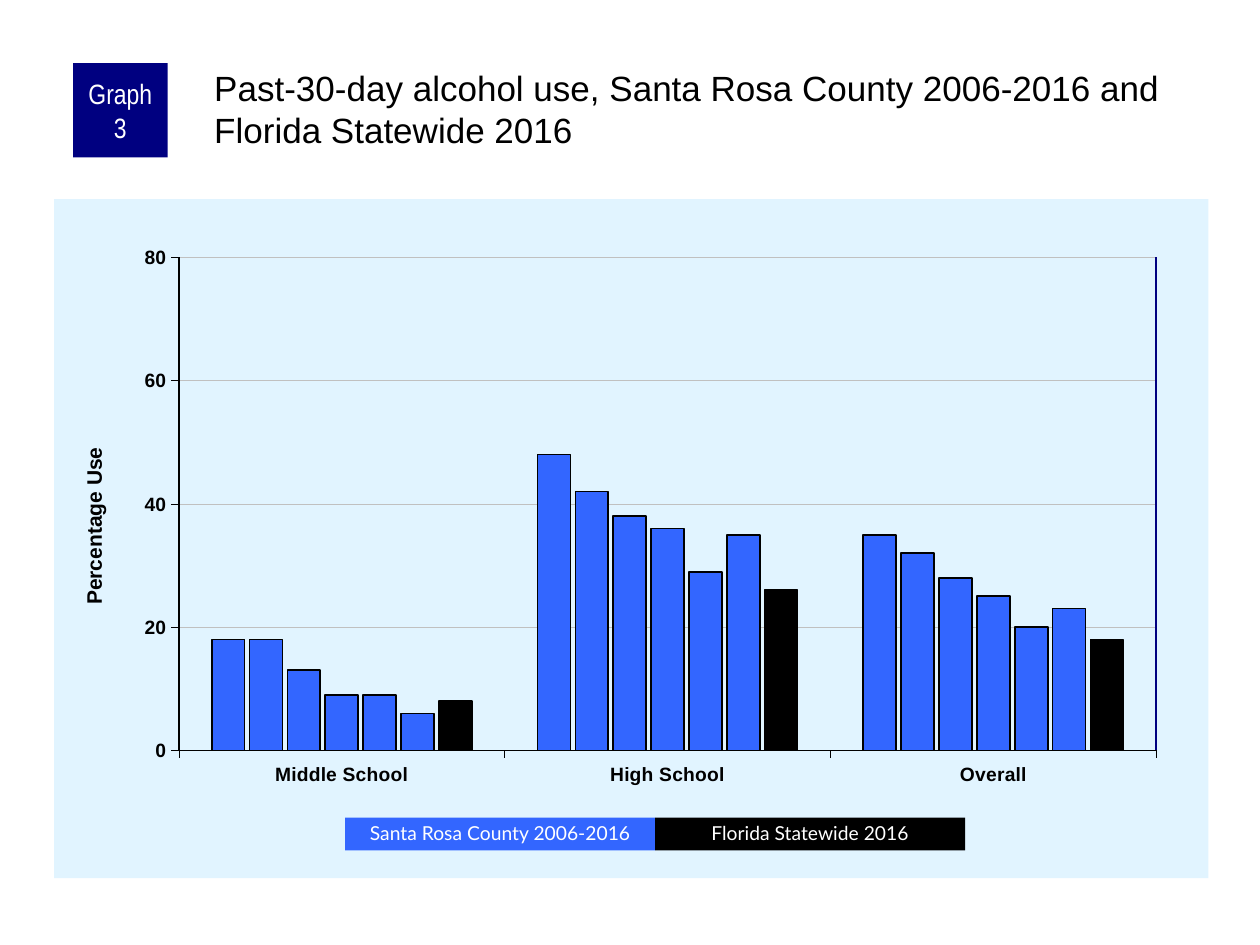
from dataclasses import dataclass

from lxml.etree import fromstring
from pptx import Presentation
from pptx.chart.data import CategoryChartData as Data
from pptx.dml.color import RGBColor
from pptx.enum.chart import XL_CHART_TYPE as Kind, XL_TICK_MARK as Tick
from pptx.enum.shapes import MSO_CONNECTOR as Link, MSO_SHAPE as Form
from pptx.enum.text import MSO_ANCHOR as Anchor, PP_ALIGN as Align
from pptx.oxml.ns import qn
from pptx.util import Inches, Pt

WIDE, HIGH = 10, 7.5
BLUE, NAVY, BLACK, WHITE = "3366FF", "000080", "000000", "FFFFFF"
PALE, GRAY = "E1F4FF", "C0C0C0"
NS = ('xmlns:c="http://schemas.openxmlformats.org/drawingml/2006/chart" '
      'xmlns:a="http://schemas.openxmlformats.org/drawingml/2006/main"')


@dataclass
class Area:
    """Left, top, width and height as inches on the slide."""
    x: float
    y: float
    w: float
    h: float

    def emu(self) -> list:
        return [Inches(v) for v in (self.x, self.y, self.w, self.h)]

    def inset(self, x: float, y: float, w: float, h: float) -> "Area":
        """An area given as shares of this one."""
        return Area(self.x + x * self.w, self.y + y * self.h,
                    w * self.w, h * self.h)


@dataclass
class Label:
    text: str
    area: Area
    fill: str
    face: str
    size: float
    space: float = 1.0
    pads: tuple = (0.05, 0, 0.05, 0)


def color(code: str) -> RGBColor:
    return RGBColor.from_string(code)


def put(thing, vals: dict) -> None:
    for key, val in vals.items():
        setattr(thing, key, val)


def ink(font, face: str, size: float, code: str, bold: bool = False) -> None:
    put(font, {"name": face, "size": Pt(size), "bold": bold})
    font.color.rgb = color(code)


def paint(fill, code: str) -> None:
    fill.solid()
    fill.fore_color.rgb = color(code)


def stroke(line, code: str, width: float) -> None:
    line.width = Pt(width)
    line.color.rgb = color(code)


def pad(frame, sides: tuple) -> None:
    names = ("margin_left", "margin_top", "margin_right", "margin_bottom")
    put(frame, {n: Inches(v) for n, v in zip(names, sides)})


def draw_label(slide, label: Label) -> None:
    box = slide.shapes.add_shape(Form.RECTANGLE, *label.area.emu())
    box.shadow.inherit = False
    paint(box.fill, label.fill)
    box.line.fill.background()
    frame = box.text_frame
    put(frame, {"word_wrap": True, "vertical_anchor": Anchor.MIDDLE,
                "text": label.text})
    pad(frame, label.pads)
    para = frame.paragraphs[0]
    put(para, {"alignment": Align.CENTER, "line_spacing": label.space})
    ink(para.runs[0].font, label.face, label.size, WHITE)


def draw_title(slide, text: str, area: Area) -> None:
    frame = slide.shapes.add_textbox(*area.emu()).text_frame
    put(frame, {"word_wrap": True, "text": text})
    pad(frame, (0.03, 0.03, 0, 0))
    ink(frame.paragraphs[0].runs[0].font, "Arial", 20, BLACK)


def layout(**vals):
    """Manual chart layout, as shares of the chart."""
    inner = '<c:layoutTarget val="inner"/>' if "w" in vals else ""
    modes = "".join(f'<c:{k}Mode val="edge"/>' for k in "xy")
    sizes = "".join(f'<c:{k} val="{v}"/>' for k, v in vals.items())
    return fromstring(f"<c:layout {NS}><c:manualLayout>{inner}{modes}{sizes}"
                      "</c:manualLayout></c:layout>")


def style(fill: str, line: str):
    return fromstring(f"<c:spPr {NS}>{fill}{line}</c:spPr>")


def solid(code: str) -> str:
    return f'<a:solidFill><a:srgbClr val="{code}"/></a:solidFill>'


def place(owner, new, after=None) -> None:
    old = owner.find(qn("c:layout"))
    if old is not None:
        owner.remove(old)
    if after is None:
        owner.insert(0, new)
    else:
        owner.find(qn(after)).addnext(new)


def draw_chart(slide, area: Area, plot: tuple, cats: list, rows: list) -> None:
    data = Data()
    data.categories = cats
    for num, vals in enumerate(rows, 1):
        data.add_series(f"Series {num}", vals)
    chart = slide.shapes.add_chart(
        Kind.COLUMN_CLUSTERED, *area.emu(), data).chart
    put(chart, {"has_legend": False, "has_title": False})
    ink(chart.font, "Arial", 8, BLACK)

    # Bars: the last series is the state
    bars = chart.plots[0]
    put(bars, {"gap_width": 200, "overlap": -15, "vary_by_categories": False})
    for num, item in enumerate(bars.series, 1):
        paint(item.format.fill, BLACK if num == len(rows) else BLUE)
        stroke(item.format.line, BLACK, 1)

    # Axes
    side = chart.value_axis
    for axis in (chart.category_axis, side):
        put(axis, {"major_tick_mark": Tick.OUTSIDE,
                   "minor_tick_mark": Tick.NONE})
        ink(axis.tick_labels.font, "Arial", 11, BLACK, True)
        stroke(axis.format.line, BLACK, 0.25)
    put(side, {"minimum_scale": 0, "maximum_scale": 80, "major_unit": 20,
               "has_major_gridlines": True})
    stroke(side.major_gridlines.format.line, GRAY, 0.25)
    frame = side.axis_title.text_frame
    frame.text = "Percentage Use"
    ink(frame.paragraphs[0].runs[0].font, "Arial", 12, BLACK, True)
    frame._txBody.find(qn("a:bodyPr")).set("rot", "-5400000")
    place(side.axis_title._element, layout(x=0.02, y=0.36), "c:tx")

    # Backdrop and plot frame
    space = chart._chartSpace
    body = space.find(qn("c:chart"))
    body.addnext(style(solid(PALE), "<a:ln><a:noFill/></a:ln>"))
    field = body.find(qn("c:plotArea"))
    place(field, layout(**dict(zip("xywh", plot))))
    field.append(style("<a:noFill/>",
                       f'<a:ln w="{Pt(1)}">{solid(BLACK)}</a:ln>'))


def draw_edge(slide, area: Area) -> None:
    """Navy line down the right side of an area."""
    x, y = area.x + area.w, area.y
    ends = [Inches(v) for v in (x, y, x, y + area.h)]
    line = slide.shapes.add_connector(Link.STRAIGHT, *ends)
    stroke(line.line, NAVY, 1.25)
    line._element.spPr.append(fromstring(f"<a:effectLst {NS}/>"))


def main() -> None:
    deck = Presentation()
    put(deck, {"slide_width": Inches(WIDE), "slide_height": Inches(HIGH)})
    slide = deck.slides.add_slide(deck.slide_layouts[6])

    # Chart
    panel = Area(0.43, 1.58, 9.16, 5.39)
    plot = (0.108, 0.086, 0.847, 0.726)
    cats = ["Middle School", "High School", "Overall"]
    rows = [(18, 48, 35), (18, 42, 32), (13, 38, 28), (9, 36, 25),
            (9, 29, 20), (6, 35, 23), (8, 26, 18)]
    draw_chart(slide, panel, plot, cats, rows)
    draw_edge(slide, panel.inset(*plot))

    # Heading
    draw_label(slide, Label("Graph 3", Area(0.58, 0.5, 0.75, 0.75), NAVY,
                            "Arial Narrow", 16))
    draw_title(slide, "Past-30-day alcohol use, Santa Rosa County 2006-2016 "
               "and Florida Statewide 2016", Area(1.67, 0.5, 7.92, 0.83))

    # Key: two equal cells side by side
    wide = 2.46
    keys = [("Santa Rosa County 2006-2016", BLUE),
            ("Florida Statewide 2016", BLACK)]
    for col, (text, fill) in enumerate(keys):
        cell = Area(2.74 + col * wide, 6.49, wide, 0.26)
        draw_label(slide, Label(text, cell, fill, "Lato", 11, 0.9,
                                (0.1, 0.05, 0.1, 0.05)))

    deck.save("out.pptx")


if __name__ == "__main__":
    main()
